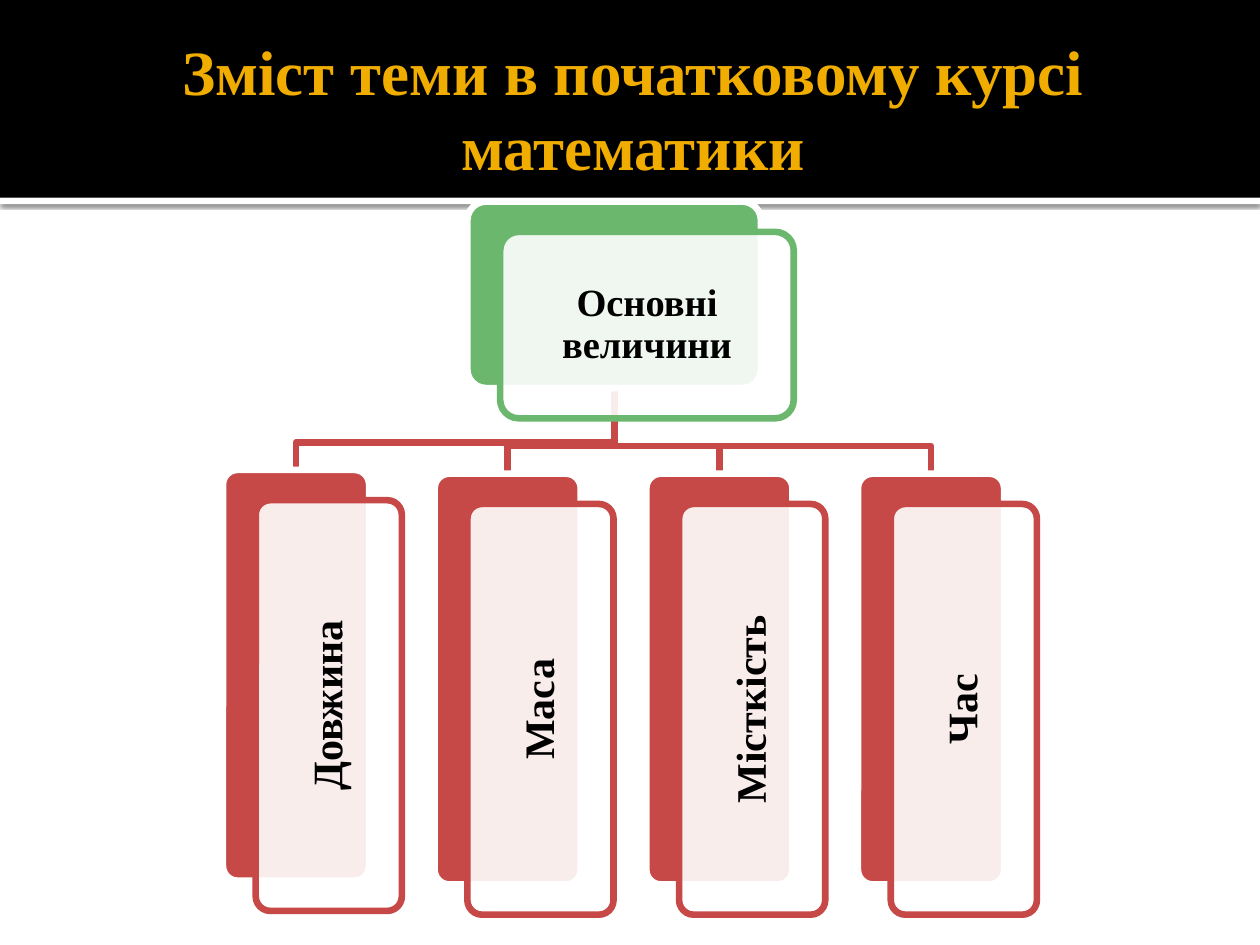
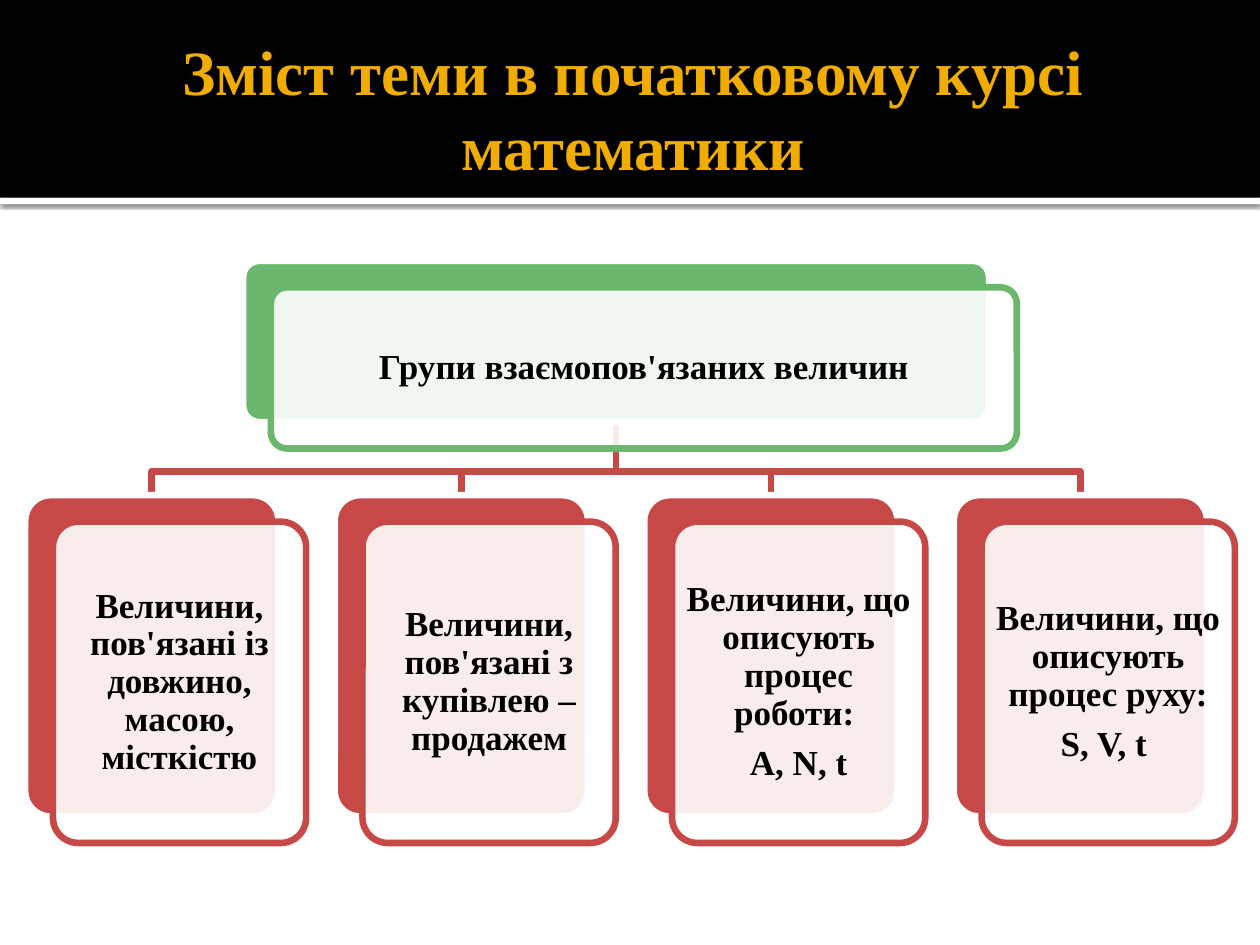
"""Build two slides that chart the quantities taught in primary school mathematics."""
from dataclasses import dataclass

from lxml import etree
from pptx import Presentation
from pptx import util as u
from pptx.dml.color import RGBColor
from pptx.enum import shapes, text
from pptx.oxml.ns import qn


@dataclass(frozen=True)
class Theme:
    """Colours and type sizes shared by the slides."""
    font: str = "Times New Roman"
    black: str = "000000"
    white: str = "FFFFFF"
    gold: str = "F0AD00"
    green: str = "6BB76D"
    red: str = "C64847"
    title_size: int = 36
    line_width: float = 3.78
    corner: float = 0.1
    panel_opacity: int = 90


@dataclass(frozen=True)
class Card:
    """A coloured plate with a translucent text panel; lengths in inches."""
    left: float
    top: float
    width: float
    height: float
    lines: tuple[str, ...]
    size: int
    colour: str
    upright: bool = False

    @property
    def centre(self) -> float:
        """Return the horizontal middle of the plate."""
        return self.left + self.width / 2


@dataclass(frozen=True)
class Tree:
    """A root card, its branches, and the panel and elbow offsets."""
    root: Card
    branches: tuple[Card, ...]
    shift: tuple[float, float]
    elbow: float


THEME = Theme()
TITLE = "Зміст теми в початковому курсі математики"


def branch_row(labels, first_left, last_left, tops, width, height, size, upright=False) -> tuple[Card, ...]:
    """Spread branch cards evenly between the first and last left edges."""
    pitch = (last_left - first_left) / (len(labels) - 1)
    return tuple(
        Card(first_left + index * pitch, top, width, height, lines, size, THEME.red, upright)
        for index, (lines, top) in enumerate(zip(labels, tops))
    )


TREES = (
    Tree(
        Card(3.71, 1.6, 2.33, 1.48, ("Основні величини",), 22, THEME.green),
        branch_row(
            (("Довжина",), ("Маса",), ("Місткість",), ("Час",)),
            1.77, 6.81, (3.73, 3.76, 3.76, 3.76), 1.16, 3.26, 24, upright=True,
        ),
        (0.26, 0.24), 0.22,
    ),
    Tree(
        Card(1.93, 2.07, 5.92, 1.28, ("Групи взаємопов'язаних величин",), 20, THEME.green),
        branch_row(
            (
                ("Величини, пов'язані із довжино, масою, місткістю",),
                ("Величини, пов'язані з купівлею – продажем",),
                ("Величини, що описують процес роботи: ", "A, N, t"),
                ("Величини, що описують процес руху:", "S, V, t "),
            ),
            0.2, 7.57, (3.93,) * 4, 2.01, 2.55, 20,
        ),
        (0.22, 0.21), 0.19,
    ),
)


def add_block(page, kind, bounds, fill: str, line: str | None = None):
    """Add a filled preset shape without a shadow."""
    box = page.shapes.add_shape(kind, *map(u.Inches, bounds))
    box.shadow.inherit = False
    box.fill.solid()
    box.fill.fore_color.rgb = RGBColor.from_string(fill)
    if line:
        paint_line(box, line)
    else:
        box.line.fill.background()
    return box


def paint_line(box, colour: str) -> None:
    """Give a shape the theme's outline in one colour."""
    box.line.color.rgb = RGBColor.from_string(colour)
    box.line.width = u.Pt(THEME.line_width)


def write(box, lines: tuple[str, ...], *, size: int, colour: str,
          insets: tuple[float, float, float, float], spacing: float = 1.0,
          after: float = 0) -> None:
    """Write bold centred paragraphs into a box."""
    frame = box.text_frame
    frame.word_wrap = True
    frame.vertical_anchor = text.MSO_ANCHOR.MIDDLE
    (frame.margin_left, frame.margin_top,
     frame.margin_right, frame.margin_bottom) = map(u.Inches, insets)
    for index, line in enumerate(lines):
        para = frame.add_paragraph() if index else frame.paragraphs[0]
        para.alignment = text.PP_ALIGN.CENTER
        para.line_spacing = spacing
        para.space_after = u.Pt(after)
        span = para.add_run()
        span.text = line
        span.font.name = THEME.font
        span.font.size = u.Pt(size)
        span.font.bold = True
        span.font.color.rgb = RGBColor.from_string(colour)


def set_opacity(colour_element, percent: int) -> None:
    """Set the opacity of a colour element."""
    etree.SubElement(colour_element, qn("a:alpha"), val=str(percent * 1000))


def add_header(page) -> None:
    """Draw the title band, its shadowed edge and the title."""
    kind = shapes.MSO_SHAPE.RECTANGLE
    edge = add_block(page, kind, (0, 1.57, 10, 0.05), THEME.white)
    effects = edge._element.spPr.find(qn("a:effectLst"))
    shadow = etree.SubElement(
        effects, qn("a:outerShdw"), blurRad=str(u.Pt(2.5)), dist=str(u.Pt(0.8)),
        dir="5400000", algn="tl", rotWithShape="0",
    )
    set_opacity(etree.SubElement(shadow, qn("a:srgbClr"), val=THEME.black), 60)
    add_block(page, kind, (0, 0, 10, 1.57), THEME.black)
    title = page.shapes.add_textbox(*map(u.Inches, (0.5, 0.17, 9, 1.37)))
    write(title, (TITLE,), size=THEME.title_size, colour=THEME.gold,
          insets=(0.1, 0.05, 0.05, 0.05))


def add_branch_line(page, root: Card, branch: Card, elbow: float) -> None:
    """Draw the elbow line from the root plate to a branch plate."""
    start = root.top + root.height
    turn = branch.top - elbow
    points = ((root.centre, turn), (branch.centre, turn), (branch.centre, branch.top))
    outline = page.shapes.build_freeform(u.Inches(root.centre), u.Inches(start))
    outline.add_line_segments([(u.Inches(x), u.Inches(y)) for x, y in points], close=False)
    line = outline.convert_to_shape()
    line.shadow.inherit = False
    line.fill.background()
    paint_line(line, THEME.red)


def add_card(page, card: Card, shift: tuple[float, float]) -> None:
    """Draw a plate and the text panel shifted over it."""
    kind = shapes.MSO_SHAPE.ROUNDED_RECTANGLE
    size = (card.width, card.height)
    plate = add_block(page, kind, (card.left, card.top, *size), card.colour, THEME.white)
    panel = add_block(page, kind, (card.left + shift[0], card.top + shift[1], *size),
                      THEME.white, card.colour)
    for box in (plate, panel):
        box.adjustments[0] = THEME.corner
    set_opacity(panel._element.spPr.find(qn("a:solidFill"))[0], THEME.panel_opacity)
    write(panel, card.lines, size=card.size, colour=THEME.black,
          insets=(0.02,) * 4, spacing=0.9, after=card.size * 0.35)
    if card.upright:
        panel.text_frame._txBody.bodyPr.set("vert", "vert270")


def add_tree(page, tree: Tree) -> None:
    """Draw the branch lines, then the cards over them."""
    for branch in reversed(tree.branches):
        add_branch_line(page, tree.root, branch, tree.elbow)
    for card in (tree.root, *tree.branches):
        add_card(page, card, tree.shift)


def main() -> None:
    """Build and save the deck."""
    deck = Presentation()
    deck.slide_width, deck.slide_height = u.Inches(10), u.Inches(7.5)
    for tree in TREES:
        page = deck.slides.add_slide(deck.slide_layouts[6])
        add_header(page)
        add_tree(page, tree)
    deck.save("out.pptx")


if __name__ == "__main__":
    main()
